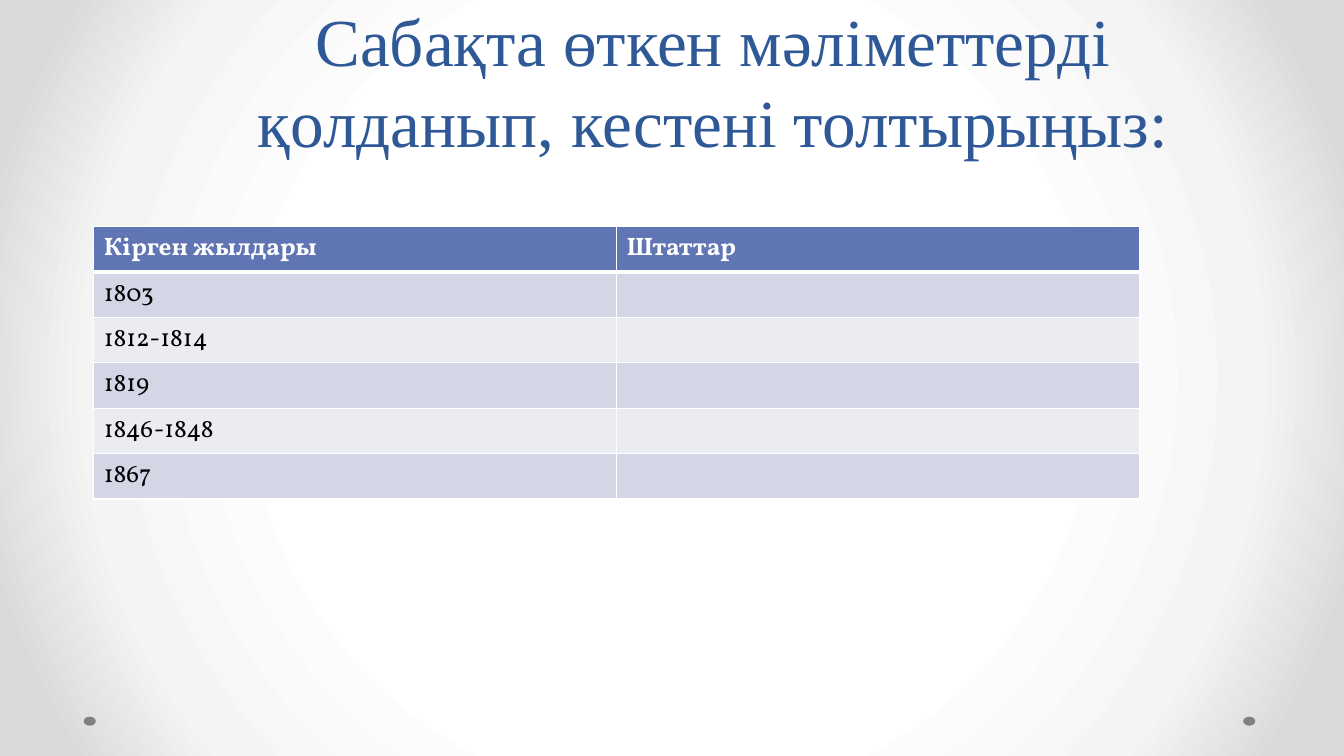
from dataclasses import dataclass

from pptx import Presentation
from pptx.dml.color import RGBColor
from pptx.enum.shapes import MSO_SHAPE
from pptx.enum.text import MSO_ANCHOR, PP_ALIGN
from pptx.oxml import parse_xml
from pptx.oxml.ns import nsdecls, qn
from pptx.util import Inches, Pt

TITLE = "Сабақта өткен мәліметтерді қолданып, кестені толтырыңыз:"
HEADERS = ("Кірген жылдары", "Штаттар")
YEARS = ("1803", "1812-1814", "1819", "1846-1848", "1867")
TITLE_FORMAT = {"name": "Times New Roman", "size": Pt(48)}
HEAD_FORMAT = {"name": "Vollkorn", "size": Pt(18), "bold": True}
BODY_FORMAT = {**HEAD_FORMAT, "bold": False}
BACKGROUND_STOPS = ((50, "FFFFFF"), (76, "F4F4F4"), (92, "DADADA"))
BANDS = ("D2D6E5", "EAECF2")
ROW_HEIGHT = 0.45


@dataclass
class Dot:
    left: float
    top: float = 7.11
    width: float = 0.12
    height: float = 0.09
    color: str = "808080"


@dataclass
class Row:
    texts: tuple
    fill: str
    color: str
    font: dict
    top_line: float = 1
    bottom_line: float = 1


def rgb(color: str) -> RGBColor:
    """Turn a hex string into a colour."""
    return RGBColor.from_string(color)


def write(p, text: str, font: dict, color: str) -> None:
    """Add a formatted run to a paragraph."""
    r = p.add_run()
    r.text = text
    for name, value in font.items():
        setattr(r.font, name, value)
    r.font.color.rgb = rgb(color)


def paint_background(s) -> None:
    """Give the slide a circular gradient."""
    s.background.fill.gradient()
    grad = next(s.element.iter(qn("a:gradFill")))
    stops = "".join(
        f'<a:gs pos="{pos * 1000}"><a:srgbClr val="{color}"/></a:gs>'
        for pos, color in BACKGROUND_STOPS
    )
    grad.getparent().replace(grad, parse_xml(
        f'<a:gradFill {nsdecls("a")} rotWithShape="1"><a:gsLst>{stops}</a:gsLst>'
        '<a:path path="circle"><a:fillToRect l="50000" t="50000" r="50000" b="50000"/>'
        "</a:path></a:gradFill>"
    ))


def draw_dot(s, dot: Dot) -> None:
    """Draw a small ellipse at the foot of the slide."""
    sp = s.shapes.add_shape(
        MSO_SHAPE.OVAL, Inches(dot.left), Inches(dot.top), Inches(dot.width), Inches(dot.height)
    )
    sp.shadow.inherit = False
    sp.fill.solid()
    sp.fill.fore_color.rgb = rgb(dot.color)
    sp.line.fill.background()


def draw_title(s) -> None:
    """Draw the centred heading."""
    sp = s.shapes.add_textbox(Inches(1.55), Inches(0), Inches(11.05), Inches(1.65))
    tf = sp.text_frame
    tf.word_wrap = True
    tf.vertical_anchor = MSO_ANCHOR.BOTTOM
    p = tf.paragraphs[0]
    p.alignment = PP_ALIGN.CENTER
    p.line_spacing = Pt(58)
    write(p, TITLE, TITLE_FORMAT, "2F5897")


def set_borders(cell, row: Row) -> None:
    """Put white lines around a cell."""
    widths = {"L": 1, "R": 1, "T": row.top_line, "B": row.bottom_line}
    tc_pr = cell._tc.get_or_add_tcPr()
    for i, (side, width) in enumerate(widths.items()):
        tc_pr.insert(i, parse_xml(
            f'<a:ln{side} {nsdecls("a")} w="{Pt(width)}"><a:solidFill>'
            f'<a:srgbClr val="FFFFFF"/></a:solidFill></a:ln{side}>'
        ))


def draw_table(s, rows: list[Row]) -> None:
    """Draw the table of years and states."""
    table = s.shapes.add_table(
        len(rows), len(HEADERS), Inches(0.93), Inches(2.25),
        Inches(10.37), Inches(ROW_HEIGHT * len(rows)),
    ).table
    for i, row in enumerate(rows):
        table.rows[i].height = Inches(ROW_HEIGHT)
        for cell, text in zip(table.rows[i].cells, row.texts):
            cell.fill.solid()
            cell.fill.fore_color.rgb = rgb(row.fill)
            set_borders(cell, row)
            if text:
                write(cell.text_frame.paragraphs[0], text, row.font, row.color)


def main() -> None:
    """Build and save the slide."""
    prs = Presentation()
    prs.slide_width, prs.slide_height = Inches(13.33), Inches(7.5)
    s = prs.slides.add_slide(prs.slide_layouts[6])
    paint_background(s)
    for dot in (Dot(12.33), Dot(0.83)):
        draw_dot(s, dot)
    draw_title(s)
    rows = [Row(HEADERS, "6076B4", "FFFFFF", HEAD_FORMAT, bottom_line=3)]
    rows += [
        Row((year, ""), BANDS[i % 2], "000000", BODY_FORMAT, top_line=1 if i else 3)
        for i, year in enumerate(YEARS)
    ]
    draw_table(s, rows)
    prs.save("out.pptx")


if __name__ == "__main__":
    main()
